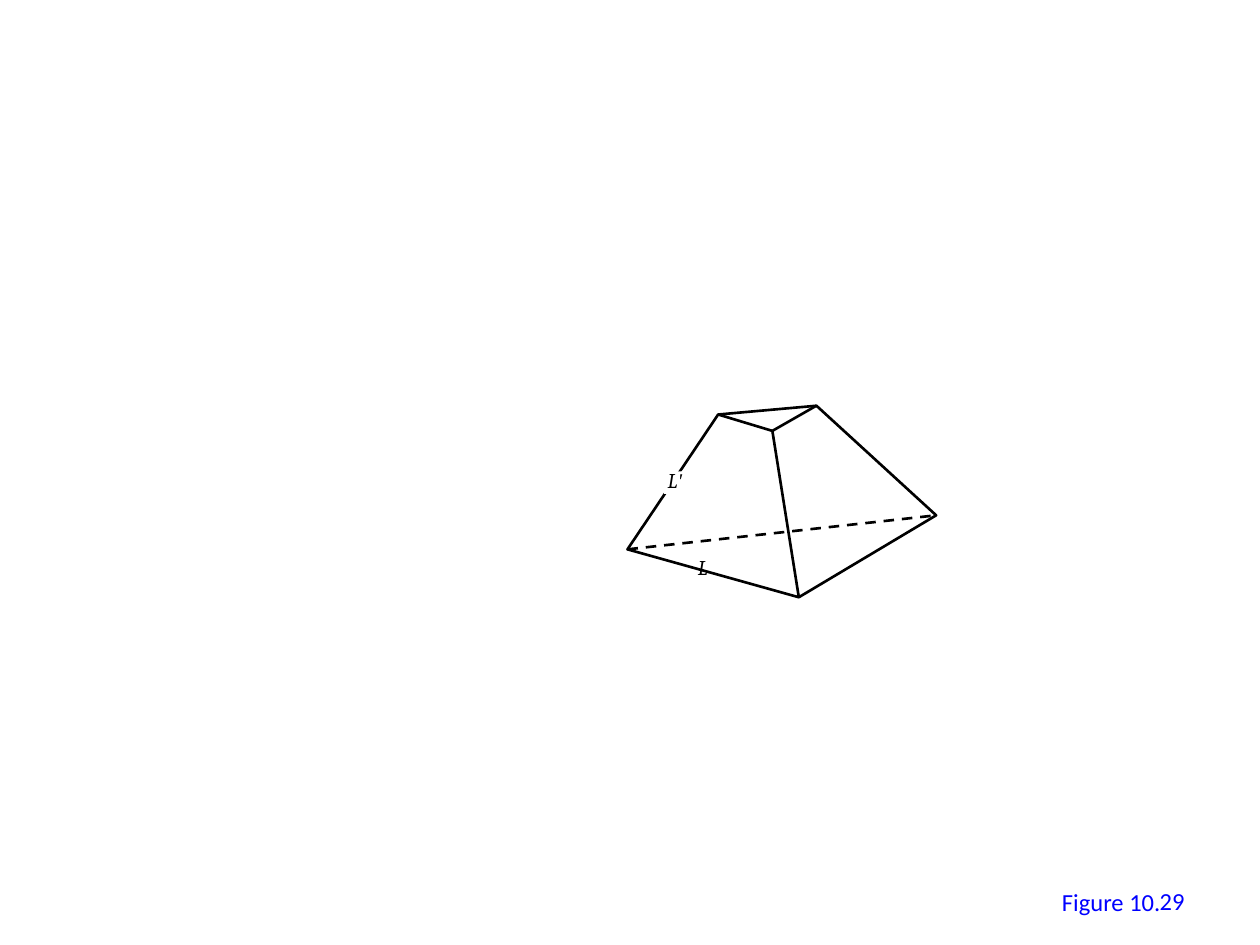
from lxml.etree import SubElement
from pptx import Presentation
from pptx.dml.color import RGBColor
from pptx.enum.dml import MSO_LINE
from pptx.enum.shapes import MSO_CONNECTOR, MSO_SHAPE
from pptx.enum.text import MSO_ANCHOR, MSO_AUTO_SIZE, PP_ALIGN
from pptx.oxml.ns import qn
from pptx.util import Inches, Pt

BLACK = RGBColor(0x00, 0x00, 0x00)
WHITE = RGBColor(0xFF, 0xFF, 0xFF)
BLUE = RGBColor(0x00, 0x00, 0xFF)

LABEL = {"name": "Cambria", "size": Pt(12), "italic": True}
PRIME = {**LABEL, "name": "Times New Roman"}
CAPTION = {"name": "Calibri", "size": Pt(14)}

FIT = {"word_wrap": False, "auto_size": MSO_AUTO_SIZE.SHAPE_TO_FIT_TEXT}
FIXED = {"word_wrap": True, "vertical_anchor": MSO_ANCHOR.MIDDLE}


def set_all(obj, values):
    for name, value in values.items():
        setattr(obj, name, value)


def add_text(s, box, runs, color, frame=FIT, align=PP_ALIGN.LEFT):
    tf = s.shapes.add_textbox(*map(Inches, box)).text_frame
    set_all(tf, frame)
    p = tf.paragraphs[0]
    p.alignment = align
    for text, font in runs:
        r = p.add_run()
        r.text = text
        set_all(r.font, font)
        r.font.color.rgb = color


def format_edge(line):
    line.color.rgb = BLACK
    line.width = Pt(1.5)


def add_frustum(s, left, top):
    def at(x, y):
        return Inches(left + x), Inches(top + y)

    base_left, base_front, base_right = at(0, 1.14), at(1.36, 1.52), at(2.45, 0.87)
    top_left, top_front, top_right = at(0.72, 0.07), at(1.15, 0.2), at(1.5, 0)

    builder = s.shapes.build_freeform(*base_left, scale=1.0)
    builder.add_line_segments([base_front, base_right, top_right, top_left], close=True)
    outline = builder.convert_to_shape()
    outline.shadow.inherit = False
    outline.fill.background()
    format_edge(outline.line)

    edges = [
        (top_front, base_front, None),
        (top_right, top_front, None),
        (top_left, top_front, None),
        (base_left, base_right, MSO_LINE.DASH),
    ]
    for start, end, dash in edges:
        edge = s.shapes.add_connector(MSO_CONNECTOR.STRAIGHT, *start, *end)
        SubElement(edge._element.spPr, qn("a:effectLst"))
        format_edge(edge.line)
        edge.line.dash_style = dash

    add_text(s, (left + 0.46, top + 1.13, 0.34, 0.3), [("L", LABEL)], BLACK)
    gap = s.shapes.add_shape(
        MSO_SHAPE.RECTANGLE, *at(0.29, 0.52), Inches(0.19), Inches(0.18))
    gap.shadow.inherit = False
    gap.fill.solid()
    gap.fill.fore_color.rgb = WHITE
    gap.line.fill.background()
    add_text(s, (left + 0.22, top + 0.44, 0.39, 0.3),
             [("L", LABEL), ("'", PRIME)], BLACK)


def add_caption(s, *box):
    add_text(s, box, [("Figure 10.", CAPTION)], BLUE)


def add_figure_number(s, *box):
    add_text(s, box, [("29", CAPTION)], BLUE, FIXED, PP_ALIGN.RIGHT)


def main():
    prs = Presentation()
    prs.slide_width, prs.slide_height = Inches(10), Inches(7.5)
    s = prs.slides.add_slide(prs.slide_layouts[6])
    add_caption(s, 8.33, 6.99, 0.99, 0.34)
    add_frustum(s, 4.98, 3.22)
    add_figure_number(s, 7.17, 6.95, 2.33, 0.4)
    prs.save("out.pptx")


if __name__ == "__main__":
    main()
